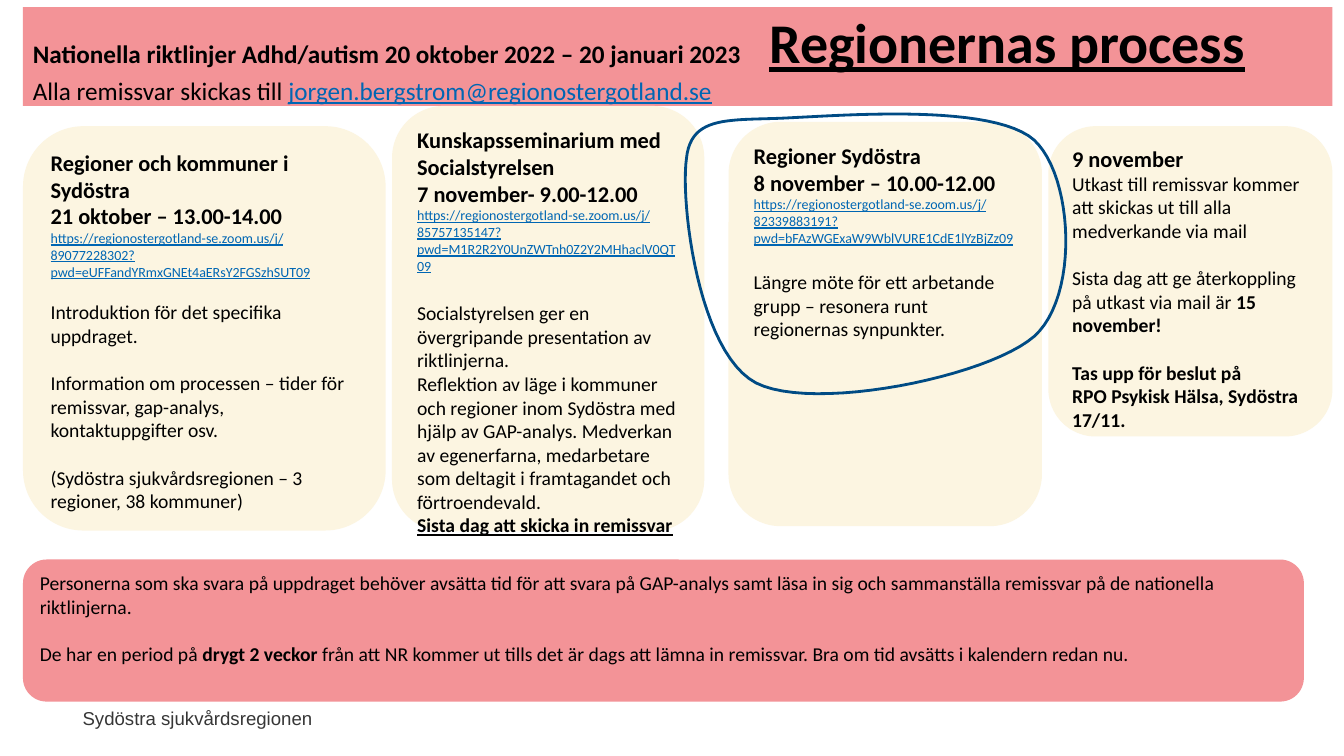
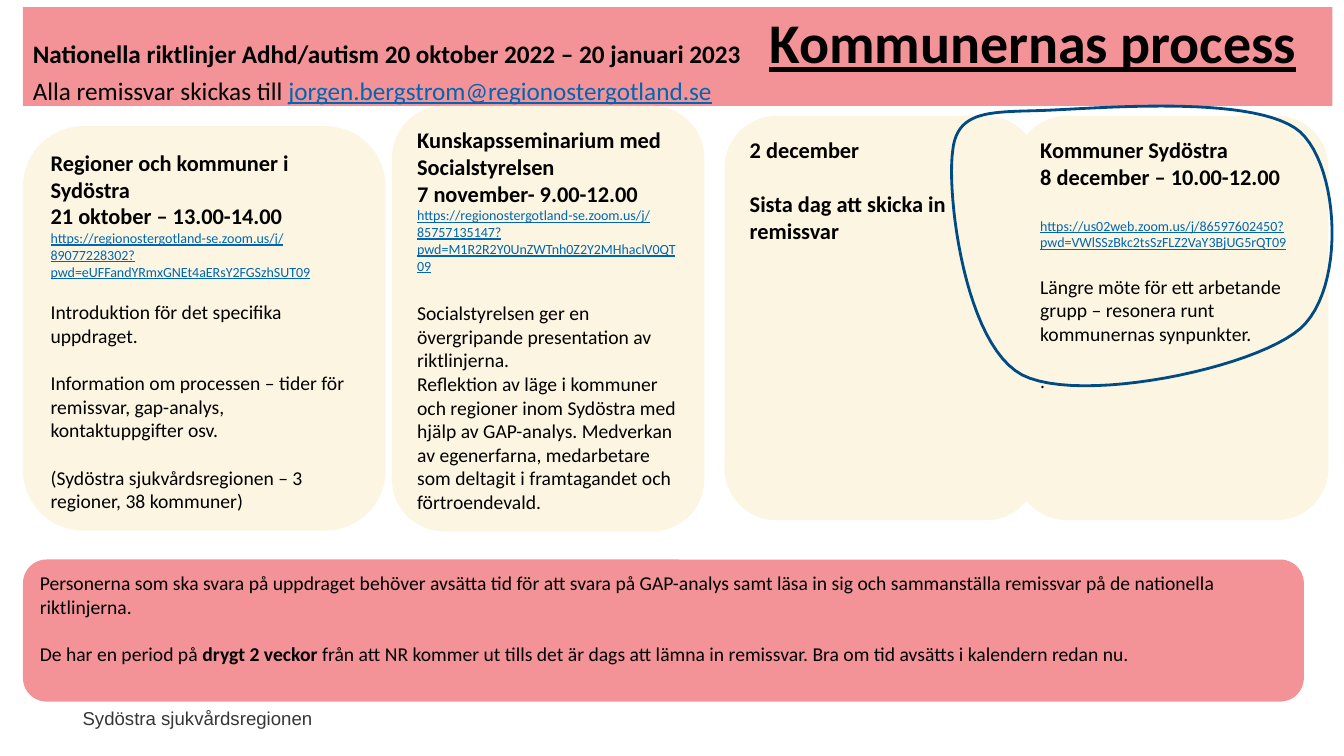
from dataclasses import dataclass

from lxml import etree
from pptx import Presentation
from pptx import util as u
from pptx.dml.color import RGBColor
from pptx.enum import shapes, text
from pptx.oxml import ns


@dataclass(frozen=True)
class Style:
    size: float
    colour: str = "000000"
    bold: bool = False
    underline: bool = False
    font: str = "Calibri"


class Theme:
    BAND = "F39397"
    CARD = "FCF5E1"
    RING = "004B84"
    LINK = "0066B3"
    TITLE = Style(40, bold=True, underline=True)
    SUBTITLE = Style(18, bold=True)
    CONTACT = Style(18)
    MAIL = Style(18, LINK, underline=True)
    HEADING = Style(16, bold=True)
    URL = Style(10, LINK, underline=True)
    BODY = Style(14)
    STRONG = Style(14, bold=True)
    DEADLINE = Style(14, bold=True, underline=True)
    FOOTER = Style(13.3, "363636", font="Arial")
    SMALL_GAP, GAP, LARGE_GAP = 14.6, 17, 19.5


RING_START = (2.64, 0.1)
RING_CURVES = [
    ((1.17, 0.18), (0.15, 0), (0.03, 1.12)),
    ((-0.13, 2.24), (0.33, 6.02), (1.78, 6.78)),
    ((3.23, 7.52), (7.62, 6.63), (8.79, 5.61)),
    ((9.93, 4.6), (9.78, 1.57), (8.79, 0.66)),
    ((7.77, -0.25), (4.09, 0.03), RING_START),
]
STEPS = 24


def bezier(start, first, second, end, t):
    weights = ((1 - t) ** 3, 3 * t * (1 - t) ** 2, 3 * t * t * (1 - t), t ** 3)
    return tuple(
        sum(w * p[axis] for w, p in zip(weights, (start, first, second, end)))
        for axis in (0, 1)
    )


class Deck:
    """Draws the process slides in one shared style."""

    def __init__(self):
        self.prs = Presentation()
        self.prs.slide_width, self.prs.slide_height = u.Cm(33.87), u.Cm(19.05)
        self.slide = None

    def new_slide(self, title):
        self.slide = self.prs.slides.add_slide(self.prs.slide_layouts[6])
        self.footer("Sydöstra sjukvårdsregionen")
        self.banner(title)
        self.note()

    def fill_text(self, frame, paragraphs):
        frame.word_wrap = True
        for index, (gap, *parts) in enumerate(paragraphs):
            para = frame.add_paragraph() if index else frame.paragraphs[0]
            para.alignment = text.PP_ALIGN.LEFT
            para.space_before = u.Pt(gap)
            for style, words in parts:
                run = para.add_run()
                run.text = words
                self.style_run(run, style)

    def style_run(self, run, style):
        font = run.font
        font.name, font.size = style.font, u.Pt(style.size)
        font.bold, font.underline = style.bold, style.underline
        font.color.rgb = RGBColor.from_string(style.colour)

    def panel(self, kind, box, fill, paragraphs, anchor=text.MSO_ANCHOR.TOP):
        panel = self.slide.shapes.add_shape(kind, *map(u.Cm, box))
        panel.shadow.inherit = False
        panel.fill.solid()
        panel.fill.fore_color.rgb = RGBColor.from_string(fill)
        panel.line.fill.background()
        panel.text_frame.vertical_anchor = anchor
        self.fill_text(panel.text_frame, paragraphs)
        return panel

    def card(self, left, top, width, height, paragraphs):
        self.panel(shapes.MSO_SHAPE.ROUNDED_RECTANGLE,
                   (left, top, width, height), Theme.CARD, paragraphs)

    def banner(self, title):
        banner = self.panel(
            shapes.MSO_SHAPE.RECTANGLE, (0.58, 0.18, 33, 2.49), Theme.BAND,
            [
                (0, (Theme.SUBTITLE,
                     "Nationella riktlinjer Adhd/autism 20 oktober 2022 – 20 januari 2023\t"),
                 (Theme.TITLE, title)),
                (0, (Theme.CONTACT, "Alla remissvar skickas till "),
                 (Theme.MAIL, "jorgen.bergstrom@regionostergotland.se")),
            ],
            text.MSO_ANCHOR.MIDDLE)
        properties = banner.text_frame.paragraphs[0]._p.get_or_add_pPr()
        stops = etree.SubElement(properties, ns.qn("a:tabLst"))
        etree.SubElement(stops, ns.qn("a:tab"), pos=str(u.Cm(18.56)), algn="l")

    def note(self):
        self.panel(
            shapes.MSO_SHAPE.ROUNDED_RECTANGLE, (0.58, 14.1, 32.28, 3.58), Theme.BAND,
            [
                (0, (Theme.BODY,
                     "Personerna som ska svara på uppdraget behöver avsätta tid för att svara på "
                     "GAP-analys samt läsa in sig och sammanställa remissvar på de nationella "
                     "riktlinjerna.")),
                (Theme.GAP, (Theme.BODY, "De har en period på "),
                 (Theme.STRONG, "drygt 2 veckor "),
                 (Theme.BODY,
                  "från att NR kommer ut tills det är dags att lämna in remissvar. "
                  "Bra om tid avsätts i kalendern redan nu.")),
            ])

    def footer(self, words):
        footer = self.slide.shapes.add_textbox(*map(u.Cm, (1.78, 17.68, 6.35, 0.84)))
        frame = footer.text_frame
        frame.text = words
        frame.word_wrap = False
        frame.paragraphs[0].alignment = text.PP_ALIGN.RIGHT
        self.style_run(frame.paragraphs[0].runs[0], Theme.FOOTER)

    def ring(self, left, top):
        points, start = [], RING_START
        for first, second, end in RING_CURVES:
            points += [bezier(start, first, second, end, step / STEPS)
                       for step in range(1, STEPS + 1)]
            start = end
        placed = [(u.Cm(left + x), u.Cm(top + y)) for x, y in [RING_START] + points]
        outline = self.slide.shapes.build_freeform(*placed[0])
        outline.add_line_segments(placed[1:-1], close=True)
        ring = outline.convert_to_shape()
        ring.shadow.inherit = False
        ring.fill.background()
        ring.line.color.rgb = RGBColor.from_string(Theme.RING)
        ring.line.width = u.Pt(2)


INTRODUCTION = [
    (0, (Theme.HEADING, "Regioner och kommuner i Sydöstra")),
    (0, (Theme.HEADING, "21 oktober – 13.00-14.00")),
    (0, (Theme.URL, "https://regionostergotland-se.zoom.us/j/89077228302"
                    "?pwd=eUFFandYRmxGNEt4aERsY2FGSzhSUT09")),
    (Theme.SMALL_GAP, (Theme.BODY, "Introduktion för det specifika uppdraget.")),
    (Theme.GAP, (Theme.BODY, "Information om processen – tider för remissvar, "
                             "gap-analys, kontaktuppgifter osv.")),
    (Theme.GAP, (Theme.BODY, "(Sydöstra sjukvårdsregionen – 3 regioner, 38 kommuner)")),
]
SEMINAR = [
    (0, (Theme.HEADING, "Kunskapsseminarium med Socialstyrelsen")),
    (0, (Theme.HEADING, "7 november- 9.00-12.00")),
    (0, (Theme.URL, "https://regionostergotland-se.zoom.us/j/85757135147"
                    "?pwd=M1R2R2Y0UnZWTnh0Z2Y2MHhaclV0QT09")),
    (Theme.LARGE_GAP, (Theme.BODY, "Socialstyrelsen ger en övergripande presentation "
                                   "av riktlinjerna.")),
    (0, (Theme.BODY, "Reflektion av läge i kommuner och regioner inom Sydöstra med hjälp av "
                     "GAP-analys. Medverkan av egenerfarna, medarbetare som deltagit i "
                     "framtagandet och förtroendevald.")),
]
SEMINAR_DEADLINE = [(0, (Theme.DEADLINE, "Sista dag att skicka in remissvar"))]
FEEDBACK = [
    (0, (Theme.HEADING, "9 november")),
    (0, (Theme.BODY, "Utkast till remissvar kommer att skickas ut till alla medverkande via mail")),
    (Theme.GAP, (Theme.BODY, "Sista dag att ge återkoppling på utkast via mail är "),
     (Theme.STRONG, "15 november!")),
    (Theme.GAP, (Theme.STRONG, "Tas upp för beslut på")),
    (0, (Theme.STRONG, "RPO Psykisk Hälsa, Sydöstra 17/11.")),
]
LAST_DAY = [
    (0, (Theme.HEADING, "2 december")),
    (Theme.LARGE_GAP, (Theme.HEADING, "Sista dag att skicka in remissvar")),
]


def meeting(group, time, url, url_gap, views):
    return [
        (0, (Theme.HEADING, group)),
        (0, (Theme.HEADING, time)),
        (url_gap, (Theme.URL, url)),
        (Theme.GAP, (Theme.BODY, f"Längre möte för ett arbetande grupp – resonera runt {views} "
                                 "synpunkter.")),
        (Theme.GAP, (Theme.BODY, ".")),
    ]


def shared_cards(deck, seminar):
    deck.card(0.58, 3.18, 9.14, 10.19, INTRODUCTION)
    deck.card(9.88, 2.67, 7.87, 10.72, seminar)


def main():
    deck = Deck()

    deck.new_slide("Regionernas process")
    deck.card(18.36, 3.07, 7.9, 10.19, meeting(
        "Regioner Sydöstra", "8 november – 10.00-12.00",
        "https://regionostergotland-se.zoom.us/j/82339883191"
        "?pwd=bFAzWGExaW9WblVURE1CdE1lYzBjZz09", 0, "regionernas"))
    shared_cards(deck, SEMINAR + SEMINAR_DEADLINE)
    deck.card(26.42, 3.18, 7.16, 7.82, FEEDBACK)
    deck.ring(17.27, 2.87)

    deck.new_slide("Kommunernas process")
    deck.card(25.58, 2.92, 7.9, 10.19, meeting(
        "Kommuner Sydöstra", "8 december – 10.00-12.00",
        "https://us02web.zoom.us/j/86597602450"
        "?pwd=VWlSSzBkc2tsSzFLZ2VaY3BjUG5rQT09", Theme.LARGE_GAP, "kommunernas"))
    shared_cards(deck, SEMINAR)
    deck.card(18.26, 2.92, 7.9, 10.19, LAST_DAY)
    deck.ring(23.98, 2.67)

    deck.prs.save("out.pptx")


if __name__ == "__main__":
    main()
